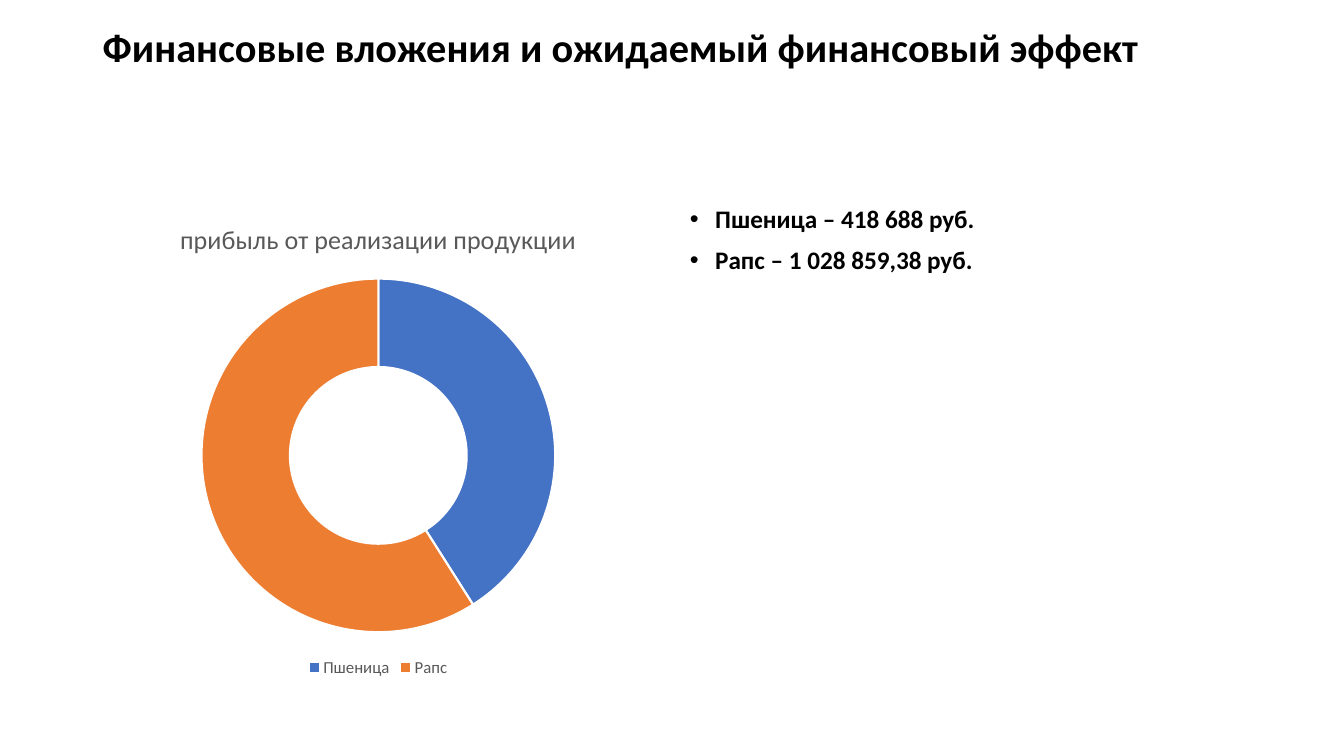
from pptx import Presentation, util as u
from pptx.chart.data import CategoryChartData
from pptx.dml.color import RGBColor
from pptx.enum import chart as ch, text as tx
from pptx.oxml import parse_xml
from pptx.oxml.ns import nsdecls

# Content
HEAD = "Финансовые вложения и ожидаемый финансовый эффект"
NAME = "прибыль от реализации продукции"
PARTS = [("Пшеница", 41, "4472C4"), ("Рапс", 59, "ED7D31")]
SUMS = ["Пшеница – 418 688 руб.", "Рапс – 1 028 859,38 руб."]

# Grid: two equal columns between equal margins
WIDE, HIGH = 13.33, 7.5
EDGE, GAP = 0.92, 0.16
COL = (WIDE - 2 * EDGE - GAP) / 2
TOP, TALL = 2, 4.76


def paint(hue):
    return RGBColor.from_string(hue)


def style(font, size, hue, bold=False):
    font.name, font.size, font.bold = "Calibri", u.Pt(size), bold
    font.color.rgb = paint(hue)


def area(left, top, wide, high):
    return [u.Inches(n) for n in (left, top, wide, high)]


def write(slide, place, lines, size, bullet=False):
    frame = slide.shapes.add_textbox(*area(*place)).text_frame
    frame.word_wrap = True
    frame.vertical_anchor = tx.MSO_ANCHOR.TOP
    for i, line in enumerate(lines):
        para = frame.paragraphs[0] if i == 0 else frame.add_paragraph()
        para.text = line
        para.line_spacing = 0.9
        if i:
            para.space_before = u.Pt(10)
        if bullet:
            props = para._p.get_or_add_pPr()
            props.set("marL", str(u.Inches(0.25)))
            props.set("indent", str(-u.Inches(0.25)))
            for tag in ('buFont %s typeface="Arial"', 'buChar %s char="•"'):
                props.append(parse_xml("<a:" + tag % nsdecls("a") + "/>"))
        style(para.font, size, "000000", True)


def draw(slide, place):
    data = CategoryChartData()
    data.categories = [part[0] for part in PARTS]
    data.add_series(NAME, [part[1] for part in PARTS])
    chart = slide.shapes.add_chart(
        ch.XL_CHART_TYPE.DOUGHNUT, *area(*place), data).chart
    style(chart.font, 10, "000000")

    # Title and legend
    chart.has_title = True
    title = chart.chart_title
    title.include_in_layout = False
    title.text_frame.text = NAME
    style(title.text_frame.paragraphs[0].font, 18.6, "595959")
    chart.has_legend = True
    chart.legend.position = ch.XL_LEGEND_POSITION.BOTTOM
    chart.legend.include_in_layout = False
    style(chart.legend.font, 12, "595959")

    # Ring
    plot = chart.plots[0]
    plot.vary_by_categories = True
    plot.has_data_labels = False
    plot._element.find("{*}holeSize").set("val", "75")
    for i, part in enumerate(PARTS):
        form = plot.series[0].points[i].format
        form.fill.solid()
        form.fill.fore_color.rgb = paint(part[2])
        form.line.color.rgb = paint("FFFFFF")
        form.line.width = u.Pt(1.5)


def main():
    deck = Presentation()
    deck.slide_width, deck.slide_height = u.Inches(WIDE), u.Inches(HIGH)
    slide = deck.slides.add_slide(deck.slide_layouts[6])
    write(slide, (EDGE, 0.23, WIDE - 2 * EDGE, 0.54), [HEAD], 28.8)
    draw(slide, (EDGE, TOP, COL, TALL))
    write(slide, (EDGE + COL + GAP, TOP, COL, TALL), SUMS, 18, True)
    deck.save("out.pptx")


if __name__ == "__main__":
    main()
